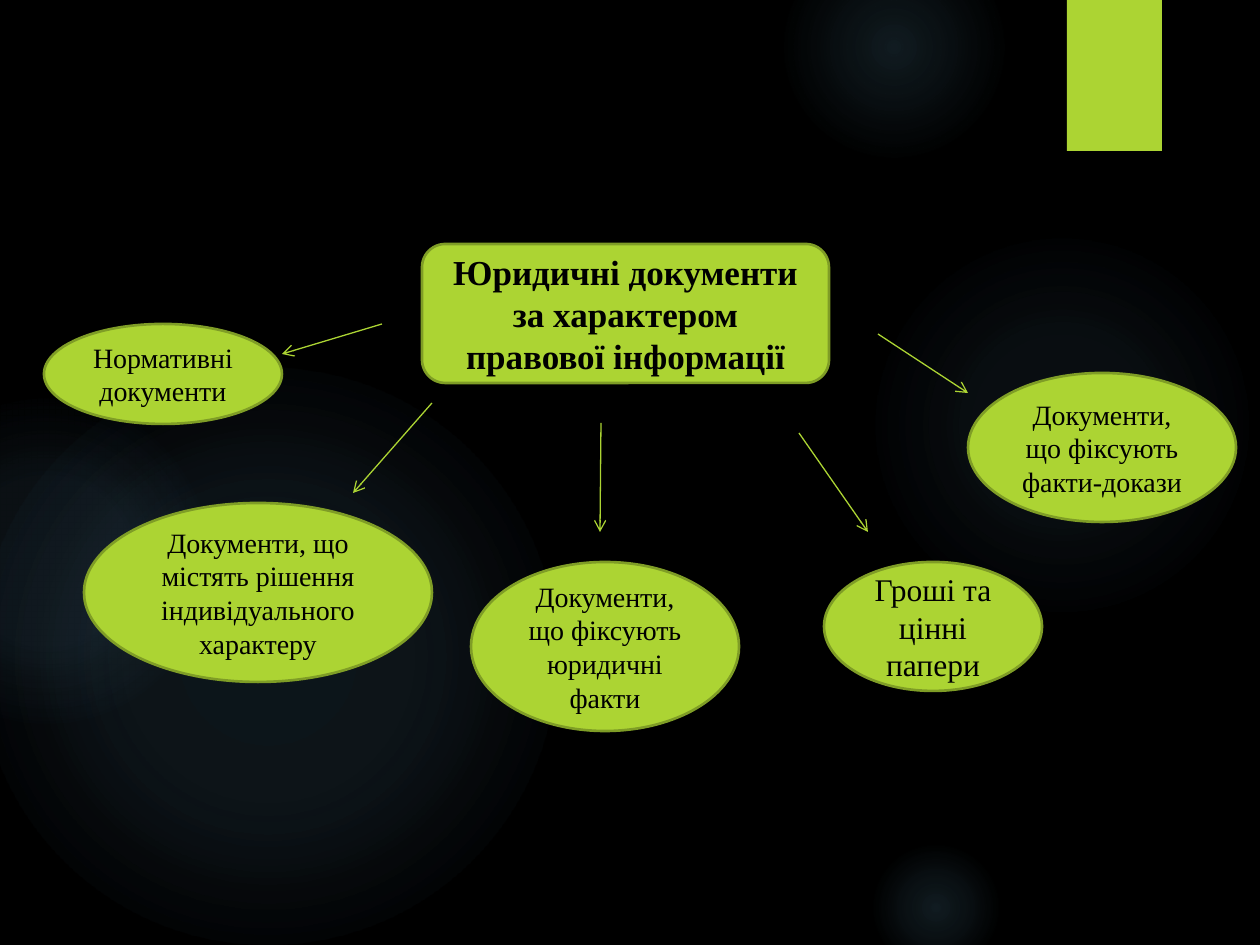
from dataclasses import dataclass

from lxml.etree import SubElement
from pptx import Presentation
from pptx.dml.color import RGBColor
from pptx.enum.shapes import MSO_CONNECTOR, MSO_SHAPE
from pptx.enum.text import MSO_ANCHOR, PP_ALIGN
from pptx.oxml import parse_xml
from pptx.oxml.ns import nsdecls, qn
from pptx.shapes.autoshape import Shape
from pptx.slide import Slide
from pptx.util import Emu, Pt

PX_PER_INCH = 126
EMU_PER_PX = 914400 / PX_PER_INCH


@dataclass(frozen=True)
class Theme:
    background: str = "000000"
    accent: str = "ACD433"
    outline: str = "7F9D26"
    glow: str = "7AC4F0"
    text: str = "000000"
    font: str = "Times New Roman"
    heading_size: int = 20
    large_size: int = 18
    body_size: int = 16
    outline_width: float = 1.5
    arrow_width: float = 0.75


THEME = Theme()


@dataclass(frozen=True)
class Glow:
    left: int
    top: int
    diameter: int
    stops: tuple[tuple[int, int], ...]  # position and opacity, in percent


@dataclass(frozen=True)
class Node:
    left: int
    top: int
    width: int
    height: int
    paragraphs: tuple[str, ...]
    size: int = THEME.body_size
    bold: bool = False
    outline: MSO_SHAPE = MSO_SHAPE.OVAL


@dataclass(frozen=True)
class Arrow:
    start: tuple[int, int]
    end: tuple[int, int]


GLOWS = (
    Glow(868, 231, 388, ((0, 7), (36, 6), (69, 0))),
    Glow(784, -63, 220, ((0, 14), (36, 7), (73, 0))),
    Glow(868, 840, 136, ((0, 14), (36, 7), (66, 0))),
    Glow(-21, 368, 577, ((0, 11), (36, 10), (75, 0))),
    Glow(-116, 399, 325, ((0, 8), (36, 8), (72, 0))),
)

NODES = (
    Node(422, 244, 407, 139,
         ("Юридичні документи", "за характером правової інформації"),
         THEME.heading_size, True, MSO_SHAPE.ROUNDED_RECTANGLE),
    Node(44, 324, 238, 100, ("Нормативні документи",)),
    Node(84, 503, 348, 179,
         ("Документи, що містять рішення індивідуального характеру",)),
    Node(471, 562, 268, 169, ("Документи, що фіксують юридичні факти",)),
    Node(824, 562, 218, 129, ("Гроші та цінні папери",), THEME.large_size),
    Node(968, 373, 268, 149, ("Документи, що фіксують факти-докази",)),
)

ARROWS = (
    Arrow((382, 324), (282, 354)),
    Arrow((432, 403), (353, 493)),
    Arrow((601, 423), (600, 532)),
    Arrow((799, 433), (868, 532)),
    Arrow((878, 334), (968, 393)),
)


def px(length: int) -> Emu:
    return Emu(round(length * EMU_PER_PX))


def color(value: str) -> RGBColor:
    return RGBColor.from_string(value)


def add_plain_shape(slide: Slide, kind: MSO_SHAPE, left: int, top: int,
                    width: int, height: int) -> Shape:
    """Add an accent-filled shape without line or shadow."""
    shape = slide.shapes.add_shape(kind, px(left), px(top), px(width), px(height))
    shape.shadow.inherit = False
    shape.fill.solid()
    shape.fill.fore_color.rgb = color(THEME.accent)
    shape.line.fill.background()
    return shape


def add_glow(slide: Slide, glow: Glow) -> None:
    shape = add_plain_shape(slide, MSO_SHAPE.OVAL, glow.left, glow.top,
                            glow.diameter, glow.diameter)
    stops = "".join(
        f'<a:gs pos="{position * 1000}"><a:srgbClr val="{THEME.glow}">'
        f'<a:alpha val="{opacity * 1000}"/></a:srgbClr></a:gs>'
        for position, opacity in glow.stops
    )
    gradient = parse_xml(
        f'<a:gradFill {nsdecls("a")} rotWithShape="1"><a:gsLst>{stops}</a:gsLst>'
        '<a:path path="circle"><a:fillToRect l="50000" t="50000" r="50000" '
        'b="50000"/></a:path></a:gradFill>'
    )
    properties = shape.element.spPr
    properties.replace(properties.find(qn("a:solidFill")), gradient)


def add_node(slide: Slide, node: Node) -> None:
    shape = add_plain_shape(slide, node.outline, node.left, node.top,
                            node.width, node.height)
    shape.line.color.rgb = color(THEME.outline)
    shape.line.width = Pt(THEME.outline_width)
    frame = shape.text_frame
    frame.word_wrap = True
    frame.vertical_anchor = MSO_ANCHOR.MIDDLE
    for index, text in enumerate(node.paragraphs):
        paragraph = frame.add_paragraph() if index else frame.paragraphs[0]
        paragraph.alignment = PP_ALIGN.CENTER
        run = paragraph.add_run()
        run.text = text
        run.font.name = THEME.font
        run.font.size = Pt(node.size)
        run.font.bold = node.bold
        run.font.color.rgb = color(THEME.text)


def add_arrow(slide: Slide, arrow: Arrow) -> None:
    connector = slide.shapes.add_connector(
        MSO_CONNECTOR.STRAIGHT, *map(px, arrow.start + arrow.end))
    connector.line.color.rgb = color(THEME.accent)
    connector.line.width = Pt(THEME.arrow_width)
    properties = connector.element.spPr
    SubElement(properties.find(qn("a:ln")), qn("a:tailEnd"), type="arrow")
    SubElement(properties, qn("a:effectLst"))


def main() -> None:
    presentation = Presentation()
    presentation.slide_width, presentation.slide_height = px(1260), px(945)
    slide = presentation.slides.add_slide(presentation.slide_layouts[6])

    # Backdrop: soft glows and the corner tab
    background = slide.background.fill
    background.solid()
    background.fore_color.rgb = color(THEME.background)
    for glow in GLOWS:
        add_glow(slide, glow)
    add_plain_shape(slide, MSO_SHAPE.RECTANGLE, 1067, 0, 95, 151)

    # Diagram: heading, document kinds and arrows
    for node in NODES:
        add_node(slide, node)
    for arrow in ARROWS:
        add_arrow(slide, arrow)

    presentation.save("out.pptx")


if __name__ == "__main__":
    main()
